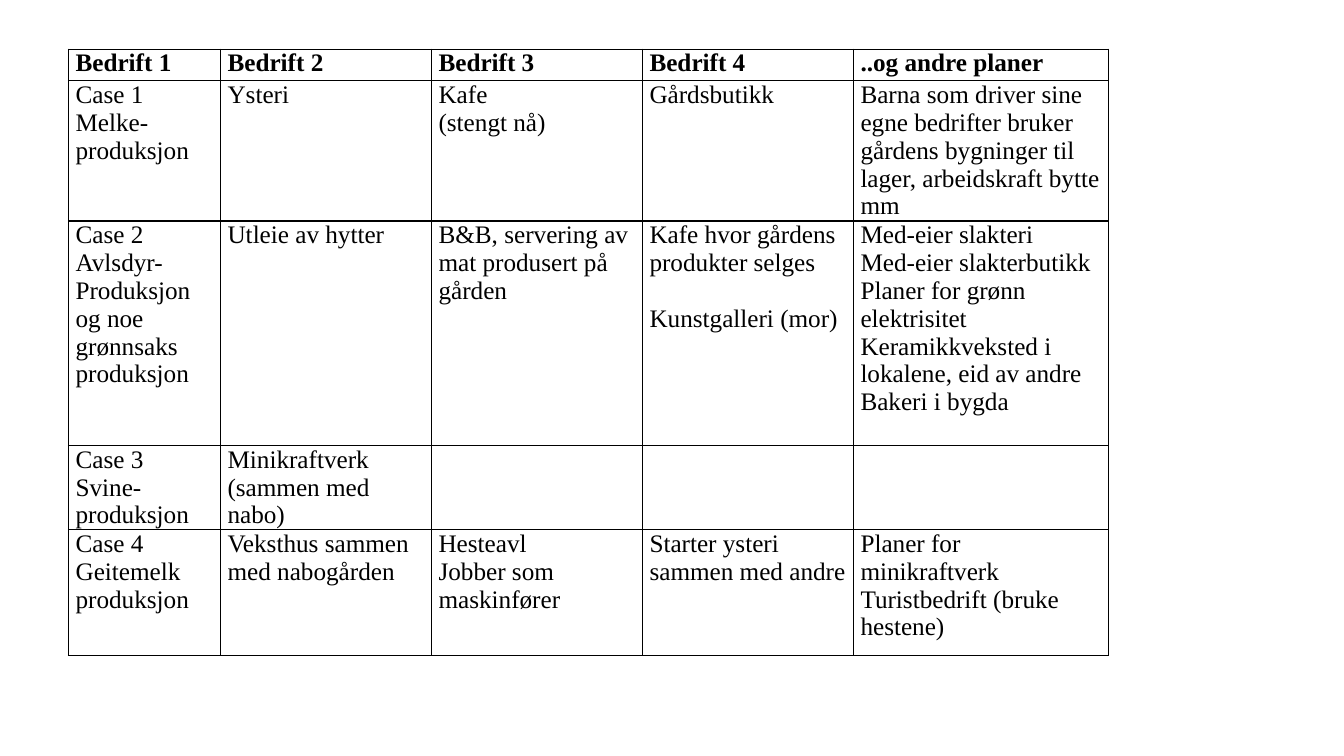
from dataclasses import astuple, dataclass

from lxml import etree
from pptx import Presentation, util as u
from pptx.dml.color import RGBColor
from pptx.oxml import ns
from pptx.table import Table, _Cell

COLORS = {"ink": "000000"}
FONT = "Times New Roman"
TEXT_SIZE = u.Pt(18)
BLANK_LINE = u.Pt(20)
BORDER_WIDTH = u.Pt(1)
CELL_MARGIN = u.Inches(0.07)

SLIDE_WIDTH = u.Inches(13.33)
SLIDE_HEIGHT = u.Inches(7.5)
LEFT_SHARE, TOP_SHARE = 5.1, 6.5
COLUMN_SHARES = (11.31, 15.7, 15.7, 15.7, 18.98)
ROW_SHARES = (4.2, 18.53, 29.73, 11.13, 16.67)


@dataclass(frozen=True)
class Farm:
    main: str
    second: str
    third: str = ""
    fourth: str = ""
    plans: str = ""


FARMS = (
    Farm("Bedrift 1", "Bedrift 2", "Bedrift 3", "Bedrift 4", "..og andre planer"),
    Farm(
        "Case 1\nMelke-produksjon",
        "Ysteri",
        "Kafe\n(stengt nå)",
        "Gårdsbutikk",
        "Barna som driver sine egne bedrifter bruker gårdens bygninger "
        "til lager, arbeidskraft bytte mm",
    ),
    Farm(
        "Case 2\nAvlsdyr-\nProduksjon og noe grønnsaks\nproduksjon",
        "Utleie av hytter",
        "B&B, servering av mat produsert på gården",
        "Kafe hvor gårdens produkter selges\n\nKunstgalleri (mor)",
        "Med-eier slakteri\nMed-eier slakterbutikk\n"
        "Planer for grønn elektrisitet\n"
        "Keramikkveksted i lokalene, eid av andre\nBakeri i bygda",
    ),
    Farm("Case 3\nSvine-\nproduksjon", "Minikraftverk (sammen med nabo)"),
    Farm(
        "Case 4\nGeitemelk produksjon",
        "Veksthus sammen med nabogården",
        "Hesteavl\nJobber som maskinfører",
        "Starter ysteri sammen med andre",
        "Planer for minikraftverk\nTuristbedrift (bruke hestene)",
    ),
)


def across(share: float) -> int:
    return round(SLIDE_WIDTH * share / 100)


def down(share: float) -> int:
    return round(SLIDE_HEIGHT * share / 100)


def draw_borders(cell: _Cell) -> None:
    properties = cell._tc.get_or_add_tcPr()
    for side in ("a:lnL", "a:lnR", "a:lnT", "a:lnB"):
        border = etree.SubElement(properties, ns.qn(side), w=str(BORDER_WIDTH))
        fill = etree.SubElement(border, ns.qn("a:solidFill"))
        etree.SubElement(fill, ns.qn("a:srgbClr"), val=COLORS["ink"])


def write_cell(cell: _Cell, content: str, bold: bool) -> None:
    cell.margin_left = cell.margin_right = CELL_MARGIN
    cell.margin_top = cell.margin_bottom = 0
    draw_borders(cell)
    cell.fill.background()
    frame = cell.text_frame
    paragraph = frame.paragraphs[0]
    for group_index, group in enumerate(content.split("\n\n")):
        for line_index, line in enumerate(group.split("\n")):
            if group_index or line_index:
                paragraph = frame.add_paragraph()
            if group_index and not line_index:
                paragraph.space_before = BLANK_LINE
            paragraph.text = line
            paragraph.font.name = FONT
            paragraph.font.size = TEXT_SIZE
            paragraph.font.bold = bold
            paragraph.font.color.rgb = RGBColor.from_string(COLORS["ink"])


def fill_table(farm_table: Table) -> None:
    farm_table.first_row = False
    farm_table.horz_banding = False
    for column, share in zip(farm_table.columns, COLUMN_SHARES):
        column.width = across(share)
    for row_index, (row, share, farm) in enumerate(
        zip(farm_table.rows, ROW_SHARES, FARMS)
    ):
        row.height = down(share)
        for cell, content in zip(row.cells, astuple(farm)):
            write_cell(cell, content, bold=row_index == 0)


def main() -> None:
    deck = Presentation()
    deck.slide_width, deck.slide_height = SLIDE_WIDTH, SLIDE_HEIGHT
    slide = deck.slides.add_slide(deck.slide_layouts.get_by_name("Blank"))
    frame = slide.shapes.add_table(
        len(ROW_SHARES),
        len(COLUMN_SHARES),
        across(LEFT_SHARE),
        down(TOP_SHARE),
        across(sum(COLUMN_SHARES)),
        down(sum(ROW_SHARES)),
    )
    fill_table(frame.table)
    deck.save("out.pptx")


if __name__ == "__main__":
    main()
